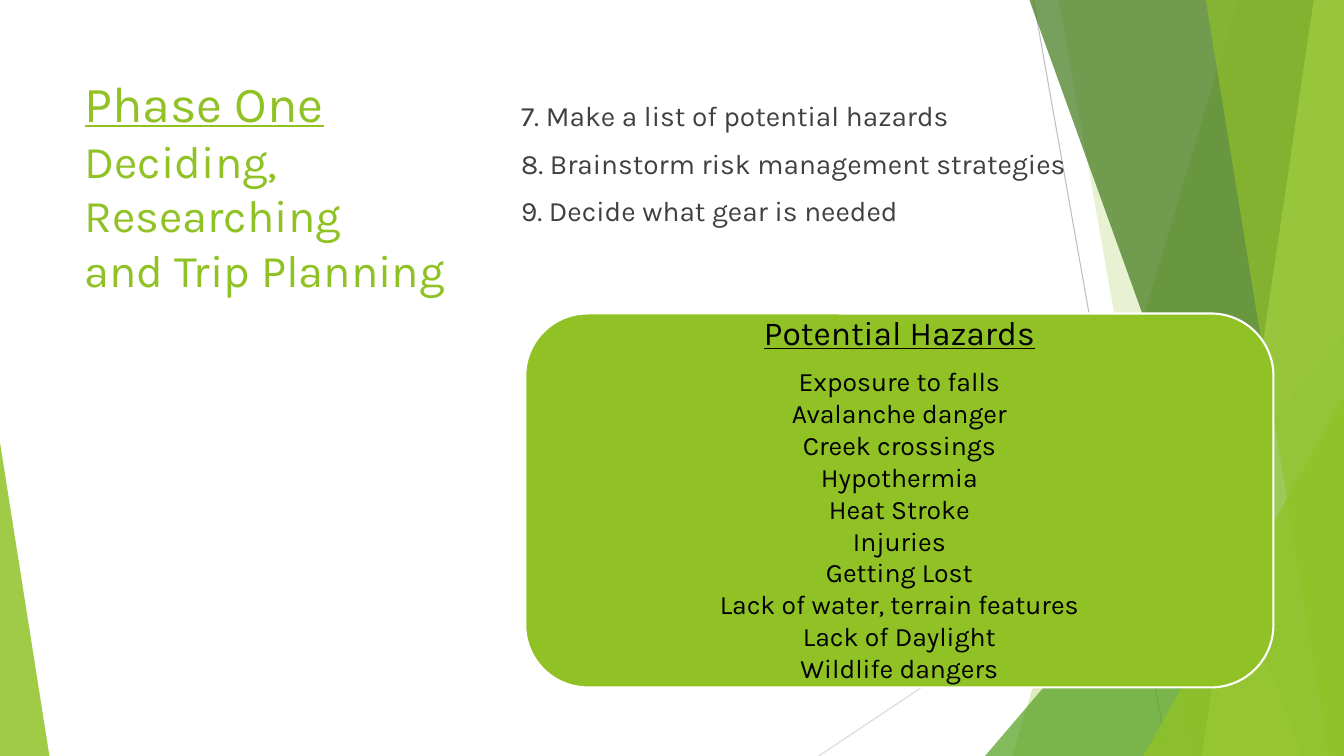
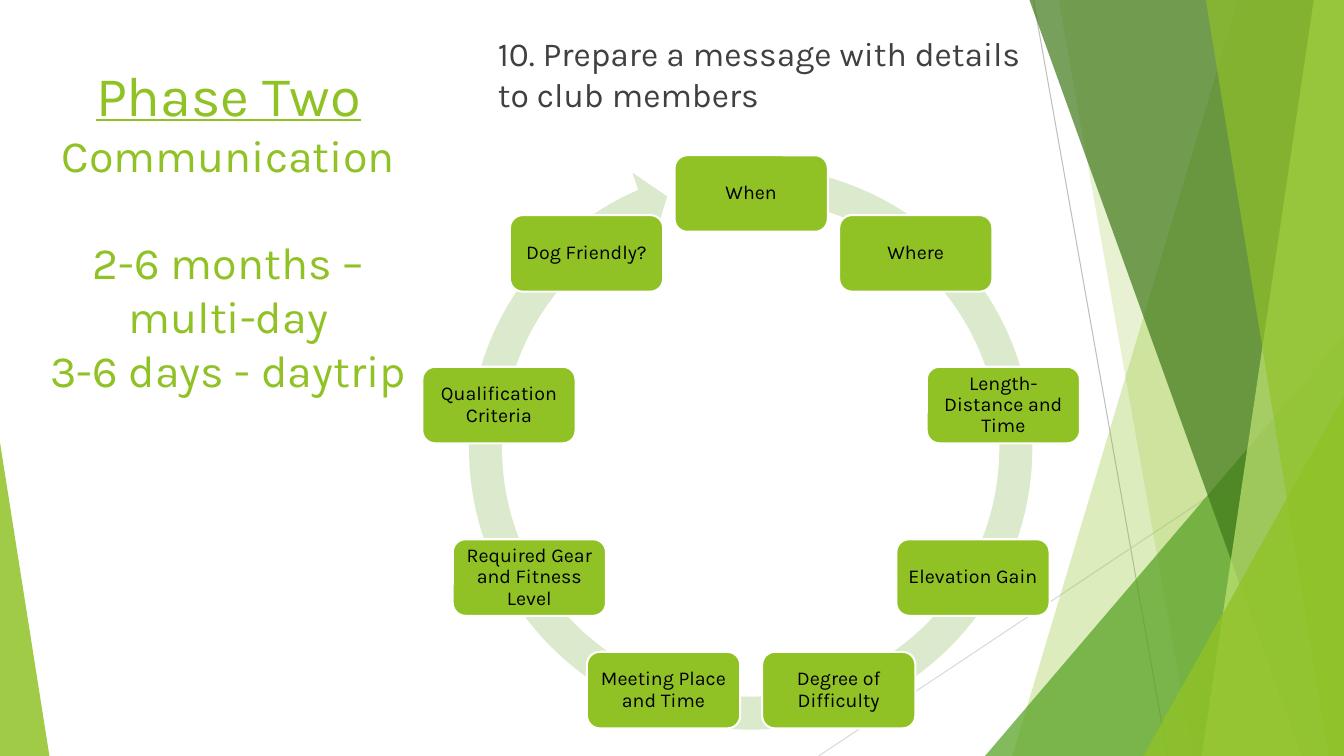
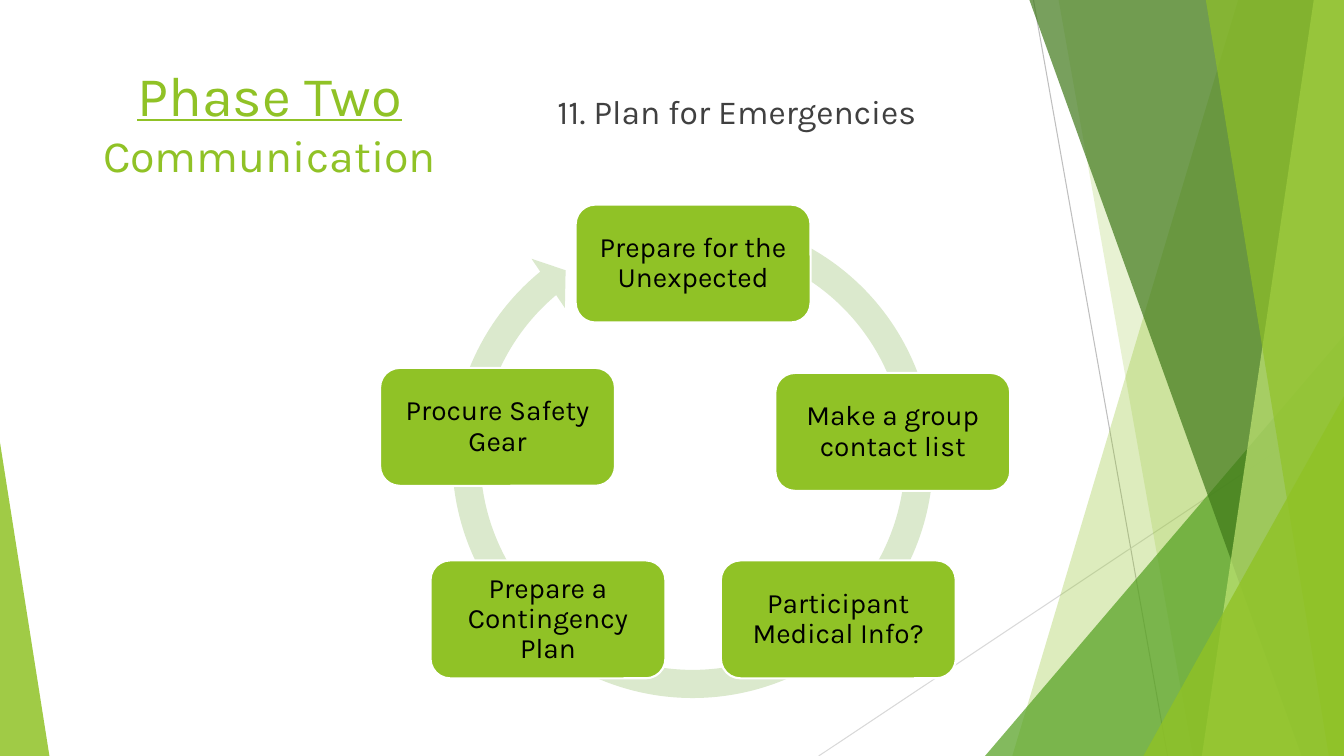
from dataclasses import dataclass
from math import cos, radians, sin

from lxml.etree import SubElement
from pptx import Presentation
from pptx.dml.color import RGBColor
from pptx.enum.shapes import MSO_CONNECTOR, MSO_SHAPE
from pptx.enum.text import MSO_ANCHOR, PP_ALIGN
from pptx.oxml.ns import qn
from pptx.util import Inches, Pt

FONT = "Karla"
LIME = RGBColor(0x90, 0xC2, 0x26)
GREEN = RGBColor(0x54, 0xA0, 0x21)
DARK = RGBColor(0x3F, 0x78, 0x19)
PALE = RGBColor(0xC0, 0xE4, 0x74)
RING = RGBColor(0xDB, 0xE9, 0xCD)
GRAY = RGBColor(0xBF, 0xBF, 0xBF)
SILVER = RGBColor(0xD9, 0xD9, 0xD9)
INK = RGBColor(0x40, 0x40, 0x40)
BLACK = RGBColor(0, 0, 0)
WHITE = RGBColor(0xFF, 0xFF, 0xFF)
WIDE, HIGH = 13.33, 7.5


@dataclass(frozen=True)
class Line:
    text: str
    size: float
    under: bool = False
    before: float = 0
    after: float = 0
    pitch: float = 1.0


@dataclass(frozen=True)
class Box:
    left: float
    top: float
    width: float
    height: float

    def place(self) -> tuple:
        return tuple(Inches(n) for n in (self.left, self.top, self.width, self.height))


@dataclass(frozen=True)
class Band:
    points: tuple
    color: RGBColor
    alpha: int


@dataclass(frozen=True)
class Wedge:
    box: Box
    apex: float
    color: RGBColor
    alpha: int


@dataclass(frozen=True)
class Rule:
    start: tuple
    end: tuple
    color: RGBColor


def strip(top: float, foot: float) -> tuple:
    return (top, 0), (WIDE, 0), (WIDE, HIGH), (foot, HIGH)


RULES = (
    Rule((10.25, 0), (11.58, HIGH), GRAY),
    Rule((WIDE, 4.03), (8.12, HIGH), SILVER),
)
FACETS = (
    Band(strip(12.28, 10.04), LIME, 30),
    Band(strip(10.5, 11.83), LIME, 20),
    Wedge(Box(9.77, 3.33, 3.56, 4.17), 1, GREEN, 72),
    Band(strip(10.21, 12.91), DARK, 70),
    Band(strip(13.03, 11.92), PALE, 70),
    Band(strip(11.96, 13.18), LIME, 65),
    Wedge(Box(11.34, 3.93, 1.99, 3.57), 1, LIME, 80),
    Wedge(Box(0, 4.39, 0.49, 3.11), 0, LIME, 85),
)


def paint(shape, color: RGBColor, alpha: int = 100) -> None:
    shape.shadow.inherit = False
    shape.line.fill.background()
    shape.fill.solid()
    shape.fill.fore_color.rgb = color
    if alpha < 100:
        tint = next(shape.fill._xPr.iter(qn("a:srgbClr")))
        SubElement(tint, qn("a:alpha")).set("val", str(alpha * 1000))


def backdrop(slide) -> None:
    for rule in RULES:
        ends = [Inches(n) for n in rule.start + rule.end]
        link = slide.shapes.add_connector(MSO_CONNECTOR.STRAIGHT, *ends)
        link.line.color.rgb = rule.color
        link.line.width = Pt(0.75)
        SubElement(link._element.spPr, qn("a:effectLst"))
    for facet in FACETS:
        if isinstance(facet, Band):
            dots = [(Inches(x), Inches(y)) for x, y in facet.points]
            pen = slide.shapes.build_freeform(*dots[0])
            pen.add_line_segments(dots[1:], close=True)
            shape = pen.convert_to_shape()
        else:
            shape = slide.shapes.add_shape(
                MSO_SHAPE.ISOSCELES_TRIANGLE, *facet.box.place())
            shape.adjustments[0] = facet.apex
        paint(shape, facet.color, facet.alpha)


def write(frame, lines: list[Line], color: RGBColor, align: PP_ALIGN) -> None:
    frame.word_wrap = True
    for i, line in enumerate(lines):
        para = frame.add_paragraph() if i else frame.paragraphs[0]
        para.alignment = align
        para.line_spacing = line.pitch
        para.space_before = Pt(line.before)
        para.space_after = Pt(line.after)
        run = para.add_run()
        run.text = line.text
        run.font.name = FONT
        run.font.size = Pt(line.size)
        run.font.underline = line.under
        run.font.color.rgb = color


def label(slide, box: Box, lines: list[Line], color: RGBColor,
          align: PP_ALIGN = PP_ALIGN.LEFT) -> None:
    frame = slide.shapes.add_textbox(*box.place()).text_frame
    write(frame, lines, color, align)


def card(slide, box: Box, lines: list[Line], inset: float) -> None:
    shape = slide.shapes.add_shape(MSO_SHAPE.ROUNDED_RECTANGLE, *box.place())
    paint(shape, LIME)
    shape.line.color.rgb = WHITE
    shape.line.width = Pt(1.5)
    frame = shape.text_frame
    frame.margin_left = frame.margin_right = Inches(inset)
    frame.margin_top = frame.margin_bottom = Inches(inset)
    frame.vertical_anchor = MSO_ANCHOR.MIDDLE
    write(frame, lines, BLACK, PP_ALIGN.CENTER)


def ring(slide, box: Box, head: float, tail: float) -> None:
    shape = slide.shapes.add_shape(MSO_SHAPE.CIRCULAR_ARROW, *box.place())
    for i, value in enumerate((0.055, 3.307, head, tail, 0.058)):
        shape.adjustments[i] = value
    paint(shape, RING)


def hazards(slide) -> None:
    label(slide, Box(0.74, 0.67, 4.47, 1.44), [
        Line("Phase One", 36, True),
        Line("Deciding, Researching", 32.4),
        Line("and Trip Planning", 32.4),
    ], LIME)
    steps = (
        "7. Make a list of potential hazards",
        "8. Brainstorm risk management strategies",
        "9. Decide what gear is needed",
    )
    label(slide, Box(5.07, 0.93, 6.33, 1.18),
          [Line(step, 20, before=10 if i else 0) for i, step in enumerate(steps)], INK)
    risks = (
        "Exposure to falls", "Avalanche danger", "Creek crossings", "Hypothermia",
        "Heat Stroke", "Injuries", "Getting Lost",
        "Lack of water, terrain features", "Lack of Daylight", "Wildlife dangers",
    )
    head = Line("Potential Hazards", 24, True, after=8.4, pitch=0.9)
    card(slide, Box(5.21, 3.11, 7.42, 3.71),
         [head] + [Line(risk, 19) for risk in risks], 0.1)


def phase(slide, width: float, extra: list[Line]) -> None:
    lines = [Line("Phase Two", 40, True), Line("Communication", 32)]
    label(slide, Box(0.34, 0.55, width, 5.68), lines + extra, LIME, PP_ALIGN.CENTER)


def message(slide) -> None:
    phase(slide, 3.85, [
        Line("2-6 months – multi-day", 32, before=38.4),
        Line("3-6 days - daytrip", 32),
    ])
    label(slide, Box(4.84, 0.28, 5.64, 0.95),
          [Line("10. Prepare a message with details to club members", 24)], INK)
    ring(slide, Box(4.47, 1.47, 5.95, 5.95), 147.686, 168.068)
    topics = (
        "When", "Where", "Length- Distance and Time", "Elevation Gain",
        "Degree of Difficulty", "Meeting Place and Time",
        "Required Gear and Fitness Level", "Qualification Criteria", "Dog Friendly?",
    )
    mid_x, mid_y, radius = 7.45, 4.46, 2.54
    width, height = 1.52, 0.76
    for i, topic in enumerate(topics):
        turn = radians(360 / len(topics) * i)
        left = mid_x + radius * sin(turn) - width / 2
        top = mid_y - radius * cos(turn) - height / 2
        card(slide, Box(left, top, width, height), [Line(topic, 14, pitch=0.9)], 0.06)


def safety(slide) -> None:
    phase(slide, 4.67, [])
    label(slide, Box(5.43, 0.85, 7.9, 0.55), [Line("11. Plan for Emergencies", 24)], INK)
    ring(slide, Box(4.33, 2, 5.08, 5.08), 138.212, 173.585)
    tasks = (
        ("Prepare for the Unexpected", 5.71, 2.03),
        ("Make a group contact list", 7.69, 3.7),
        ("Participant Medical Info?", 7.15, 5.56),
        ("Prepare a Contingency Plan", 4.27, 5.56),
        ("Procure Safety Gear", 3.77, 3.65),
    )
    for task, left, top in tasks:
        card(slide, Box(left, top, 2.33, 1.17), [Line(task, 20, pitch=0.9)], 0.08)


def main() -> None:
    deck = Presentation()
    deck.slide_width, deck.slide_height = Inches(WIDE), Inches(HIGH)
    for draw in (hazards, message, safety):
        slide = deck.slides.add_slide(deck.slide_layouts[6])
        backdrop(slide)
        draw(slide)
    deck.save("out.pptx")


if __name__ == "__main__":
    main()
